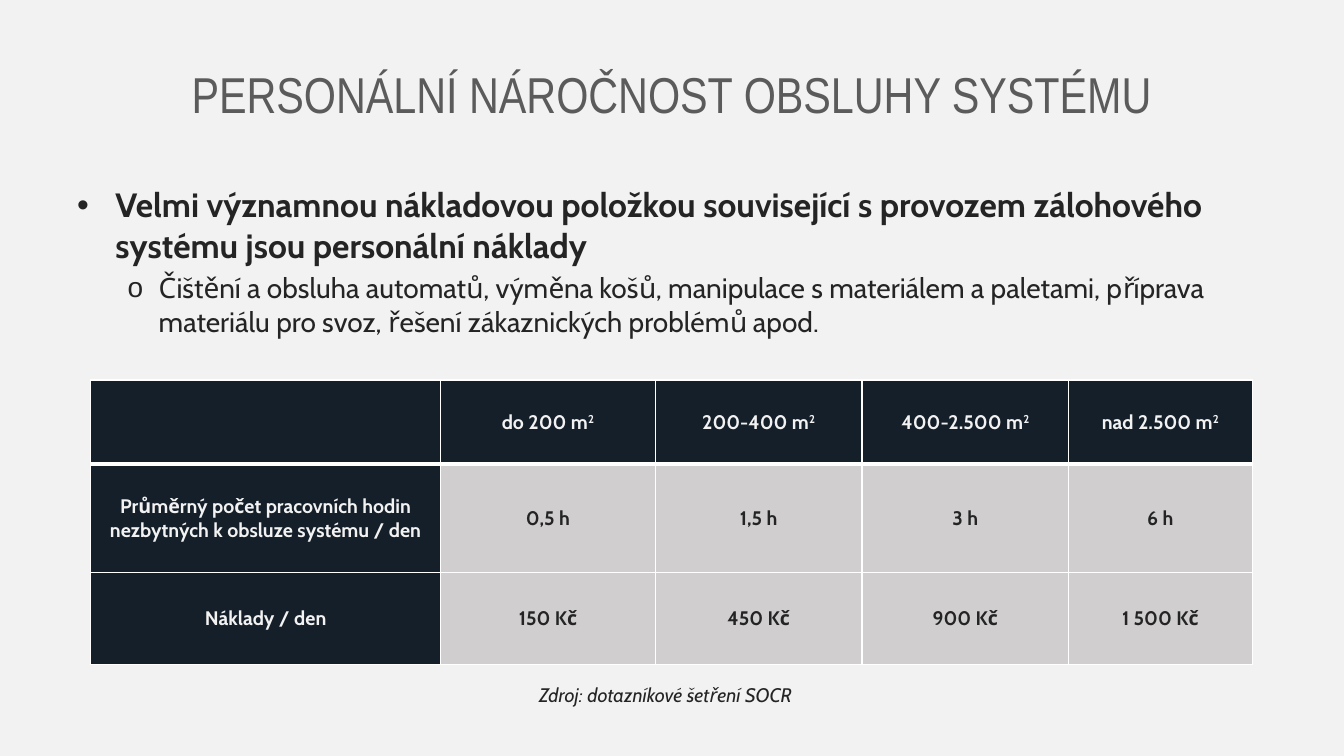
from dataclasses import dataclass

from lxml import etree
from pptx import Presentation
from pptx import util as u
from pptx.dml.color import RGBColor
from pptx.enum import text
from pptx.oxml.ns import qn


@dataclass(frozen=True)
class Theme:
    background: str = "F2F2F2"
    title: str = "5B5B5B"
    ink: str = "242424"
    dark: str = "151F29"
    grey: str = "D0CECE"
    border: str = "FFFFFF"
    title_font: str = "Arial Narrow"
    body_font: str = "Cabin"
    title_size: int = 36
    lead_size: int = 24
    detail_size: int = 20
    small_size: int = 14


theme = Theme()


def format_runs(paragraph, size, color, font=theme.body_font, bold=False, italic=False):
    for run in paragraph.runs:
        run.font.name = font
        run.font.size = u.Pt(size)
        run.font.bold = bold
        run.font.italic = italic
        run.font.color.rgb = RGBColor.from_string(color)


def add_border(cell, side, width):
    """Draw one side (L, R, T or B) of a table cell."""
    properties = cell._tc.get_or_add_tcPr()
    line = etree.SubElement(properties, qn(f"a:ln{side}"), w=str(u.Pt(width)))
    fill = etree.SubElement(line, qn("a:solidFill"))
    etree.SubElement(fill, qn("a:srgbClr"), val=theme.border)


presentation = Presentation()
presentation.slide_width = u.Inches(13.33)
presentation.slide_height = u.Inches(7.5)
WIDTH, HEIGHT = presentation.slide_width, presentation.slide_height
MARGIN = int(WIDTH * 0.05)
CONTENT_WIDTH = WIDTH - 2 * MARGIN

slide = presentation.slides.add_slide(presentation.slide_layouts[5])
slide.background.fill.solid()
slide.background.fill.fore_color.rgb = RGBColor.from_string(theme.background)

# Title
title = slide.shapes.title
title.left, title.top = MARGIN, int(HEIGHT * 0.04)
title.width, title.height = CONTENT_WIDTH, u.Inches(1.25)
title.text_frame.text = "PERSONÁLNÍ NÁROČNOST OBSLUHY SYSTÉMU"
title.text_frame.vertical_anchor = text.MSO_ANCHOR.MIDDLE
title.text_frame.paragraphs[0].alignment = text.PP_ALIGN.CENTER
format_runs(title.text_frame.paragraphs[0], theme.title_size, theme.title, theme.title_font)

# Bulleted text: wording, level, bullet, left margin, hanging indent, size, bold, space before
points = [
    ("Velmi významnou nákladovou položkou související s provozem zálohového "
     "systému jsou personální náklady",
     0, "•", 0.38, 0.38, theme.lead_size, True, 0),
    ("Čištění a obsluha automatů, výměna košů, manipulace s materiálem a paletami, "
     "příprava materiálu pro svoz, řešení zákaznických problémů apod.",
     1, "o", 0.81, 0.31, theme.detail_size, False, 4),
]
body = slide.shapes.add_textbox(MARGIN, u.Inches(1.78), CONTENT_WIDTH, u.Inches(1.8))
body.text_frame.word_wrap = True
body.text_frame.text = "\n".join(point[0] for point in points)
for paragraph, point in zip(body.text_frame.paragraphs, points):
    _, level, bullet, margin, hanging, size, bold, space = point
    paragraph.level = level
    paragraph.space_before = u.Pt(space)
    properties = paragraph._p.get_or_add_pPr()
    properties.set("marL", str(u.Inches(margin)))
    properties.set("indent", str(-u.Inches(hanging)))
    etree.SubElement(properties, qn("a:buFont"), typeface="Arial")
    etree.SubElement(properties, qn("a:buChar"), char=bullet)
    format_runs(paragraph, size, theme.ink, bold=bold)

# Table of staff hours and costs by shop area
column_widths = [3.47, 2.13, 2.05, 2.05, 1.82]
row_heights = [0.83, 1.08, 0.91]
rows = [
    ["", "do 200 m", "200-400 m", "400-2.500 m", "nad 2.500 m"],
    ["Průměrný počet pracovních hodin nezbytných k obsluze systému / den",
     "0,5 h", "1,5 h", "3 h", "6 h"],
    ["Náklady / den", "150 Kč", "450 Kč", "900 Kč", "1 500 Kč"],
]
table = slide.shapes.add_table(
    len(rows), len(column_widths), u.Inches(0.9), u.Inches(3.77),
    u.Inches(sum(column_widths)), u.Inches(sum(row_heights))).table
for column, width in zip(table.columns, column_widths):
    column.width = u.Inches(width)
for row, height in zip(table.rows, row_heights):
    row.height = u.Inches(height)

for row_index, row in enumerate(rows):
    for column_index, wording in enumerate(row):
        cell = table.cell(row_index, column_index)
        is_header = row_index == 0 or column_index == 0
        for side in "LRTB":
            under_header = (row_index, side) in [(0, "B"), (1, "T")]
            add_border(cell, side, 3 if under_header else 1)
        cell.fill.solid()
        cell.fill.fore_color.rgb = RGBColor.from_string(theme.dark if is_header else theme.grey)
        cell.vertical_anchor = text.MSO_ANCHOR.MIDDLE
        cell.margin_left = cell.margin_right = cell.margin_top = u.Inches(0.01 if is_header else 0)
        cell.margin_bottom = 0
        if not wording:
            continue
        paragraph = cell.text_frame.paragraphs[0]
        paragraph.text = wording
        paragraph.alignment = text.PP_ALIGN.CENTER
        if row_index == 0:
            exponent = paragraph.add_run()
            exponent.text = "2"
            exponent.font._element.set("baseline", "30000")
        format_runs(paragraph, theme.small_size,
                    theme.background if is_header else theme.ink, bold=True)

# Source line
source = slide.shapes.add_textbox(u.Inches(5.25), u.Inches(6.73), u.Inches(2.84), u.Inches(0.34))
source.text_frame.word_wrap = True
source.text_frame.text = "Zdroj: dotazníkové šetření SOCR"
format_runs(source.text_frame.paragraphs[0], theme.small_size, theme.ink, italic=True)

presentation.save("out.pptx")
